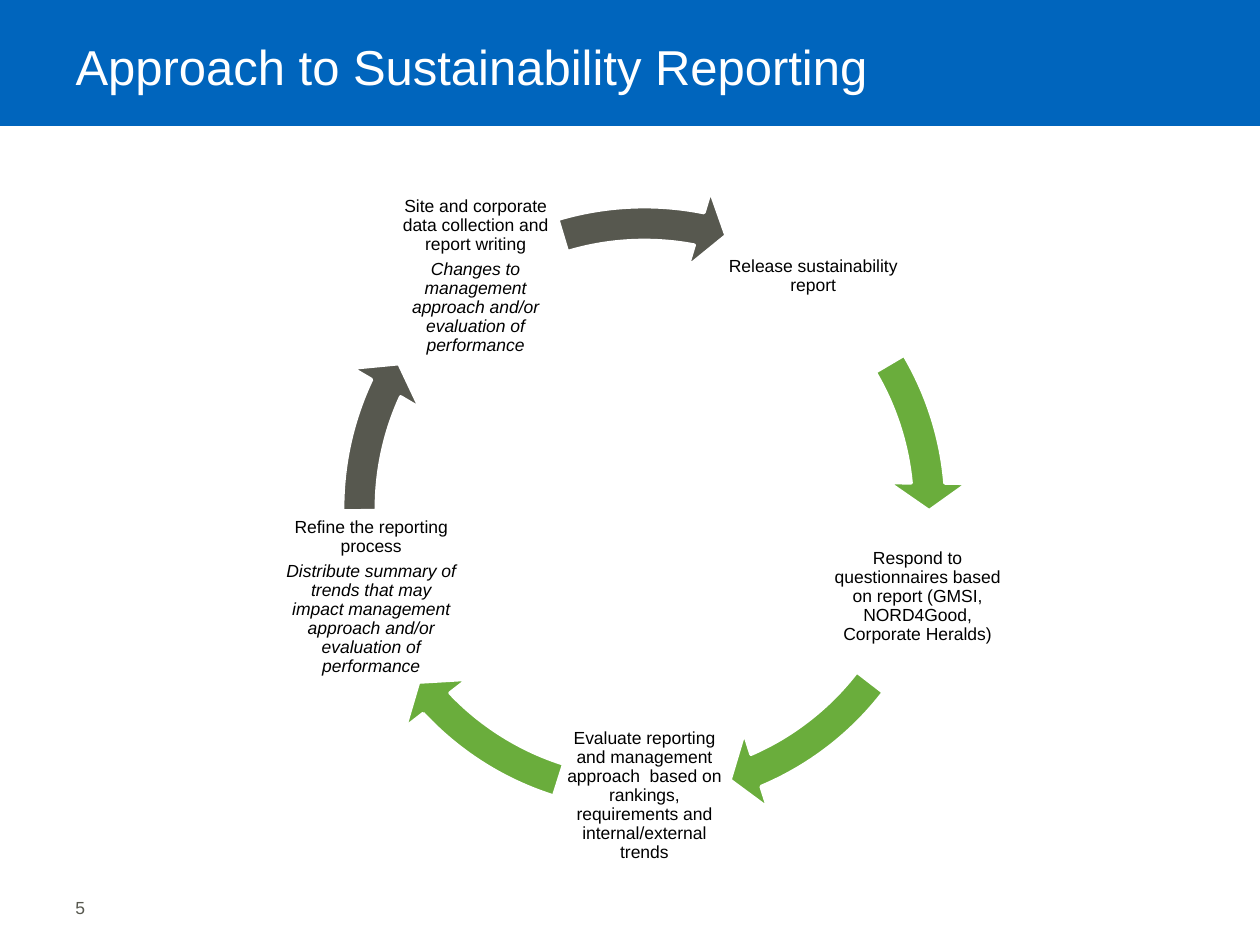
from math import cos, radians, sin

from pptx import Presentation
from pptx.dml.color import RGBColor
from pptx.enum.shapes import MSO_SHAPE as SHAPE
from pptx.enum.text import MSO_ANCHOR as ANCHOR, PP_ALIGN as ALIGN
from pptx.util import Cm, Pt

BLUE = RGBColor(0x00, 0x65, 0xBD)
GREEN = RGBColor(0x6A, 0xAD, 0x3C)
GREY = RGBColor(0x57, 0x58, 0x4F)
WHITE = RGBColor(0xFF, 0xFF, 0xFF)
BLACK = RGBColor(0x00, 0x00, 0x00)
FONT = "Arial"
DEGREE = 0.6

STEPS = [
    (["Release sustainability report"], GREEN, 329.45, 354.88),
    (["Respond to questionnaires based on report (GMSI, NORD4Good, "
      "Corporate Heralds)"], GREEN, 37.57, 66.9),
    (["Evaluate reporting and management approach  based on rankings, "
      "requirements and internal/external trends"], GREEN, 107.5, 136.83),
    (["Refine the reporting process",
      "Distribute summary of trends that may impact management approach "
      "and/or evaluation of performance"], GREY, 179.52, 204.95),
    (["Site and corporate data collection and report writing",
      "Changes to management approach and/or evaluation of performance"],
     GREY, 253.32, 281.08),
]


def style_font(font, size, color):
    """Set typeface, size in points and colour."""
    font.name, font.size = FONT, Pt(size)
    font.color.rgb = color


def add_header(slide, width, height):
    """Draw the blue band and place the title over it."""
    band = slide.shapes.add_shape(SHAPE.RECTANGLE, 0, 0, width, height)
    band.shadow.inherit = False
    band.fill.solid()
    band.fill.fore_color.rgb = BLUE
    band.line.fill.background()
    title = slide.shapes.title
    title._element.addprevious(band._element)
    title.left, title.top = Cm(1.27), 0
    title.width, title.height = Cm(19.33), Cm(2.67)
    tf = title.text_frame
    tf.text = "Approach to Sustainability Reporting"
    tf.vertical_anchor = ANCHOR.MIDDLE
    p = tf.paragraphs[0]
    p.alignment = ALIGN.LEFT
    style_font(p.runs[0].font, 28, WHITE)


def add_step(slide, texts, left, top, size):
    """Add one step label, with any second paragraph in italics."""
    tf = slide.shapes.add_textbox(left, top, size, size).text_frame
    tf.word_wrap = True
    tf.vertical_anchor = ANCHOR.MIDDLE
    tf.margin_left = tf.margin_right = Cm(0.03)
    tf.margin_top = tf.margin_bottom = Cm(0.03)
    for i, text in enumerate(texts):
        p = tf.add_paragraph() if i else tf.paragraphs[0]
        p.text = text
        p.alignment = ALIGN.CENTER
        p.line_spacing = 0.9
        p.space_after = Pt(3.5)
        font = p.runs[0].font
        style_font(font, 10, BLACK)
        font.italic = i > 0


def add_arrow(slide, left, top, size, color, start, end):
    """Add a curved arrow sweeping clockwise between two angles."""
    sp = slide.shapes.add_shape(SHAPE.CIRCULAR_ARROW, left, top, size, size)
    sp.shadow.inherit = False
    values = [0.052, 5.6 * DEGREE, end * DEGREE, start * DEGREE, 0.061]
    for i, value in enumerate(values):
        sp.adjustments[i] = value
    sp.fill.solid()
    sp.fill.fore_color.rgb = color
    sp.line.color.rgb = WHITE
    sp.line.width = Pt(2)


def add_cycle(slide, left, top, size):
    """Spread the steps evenly round a circle and link them with arrows."""
    label, radius = Cm(3.48), Cm(5.79)
    turn = 360 / len(STEPS)
    for i, (texts, color, start, end) in enumerate(STEPS):
        angle = radians(i * turn - 54)
        x = left + size / 2 + radius * cos(angle)
        y = top + size / 2 + radius * sin(angle)
        add_step(slide, texts, int(x - label / 2), int(y - label / 2), label)
        add_arrow(slide, left, top, size, color, start, end)


def add_page_number(slide, left, top, width, height):
    """Add the page number at the foot of the slide."""
    tf = slide.shapes.add_textbox(left, top, width, height).text_frame
    tf.word_wrap = True
    tf.vertical_anchor = ANCHOR.MIDDLE
    tf.text = "5"
    style_font(tf.paragraphs[0].runs[0].font, 10, GREY)


def main():
    """Build and save the slide."""
    prs = Presentation()
    prs.slide_width, prs.slide_height = Cm(25.4), Cm(19.05)
    slide = prs.slides.add_slide(prs.slide_layouts[5])
    add_header(slide, prs.slide_width, Cm(2.54))
    add_cycle(slide, Cm(6.45), Cm(3.71), Cm(13.08))
    add_page_number(slide, Cm(1.27), Cm(17.78), Cm(5.08), Cm(1.02))
    prs.save("out.pptx")


if __name__ == "__main__":
    main()
